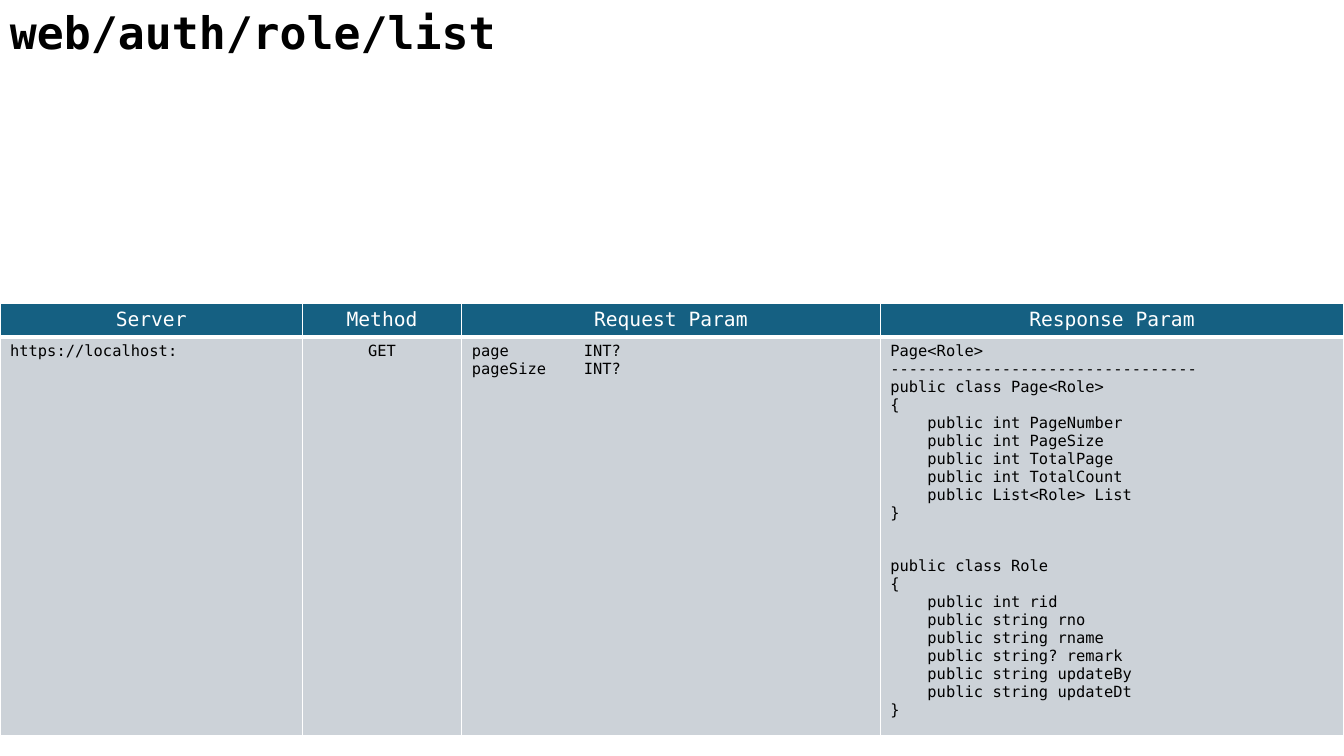
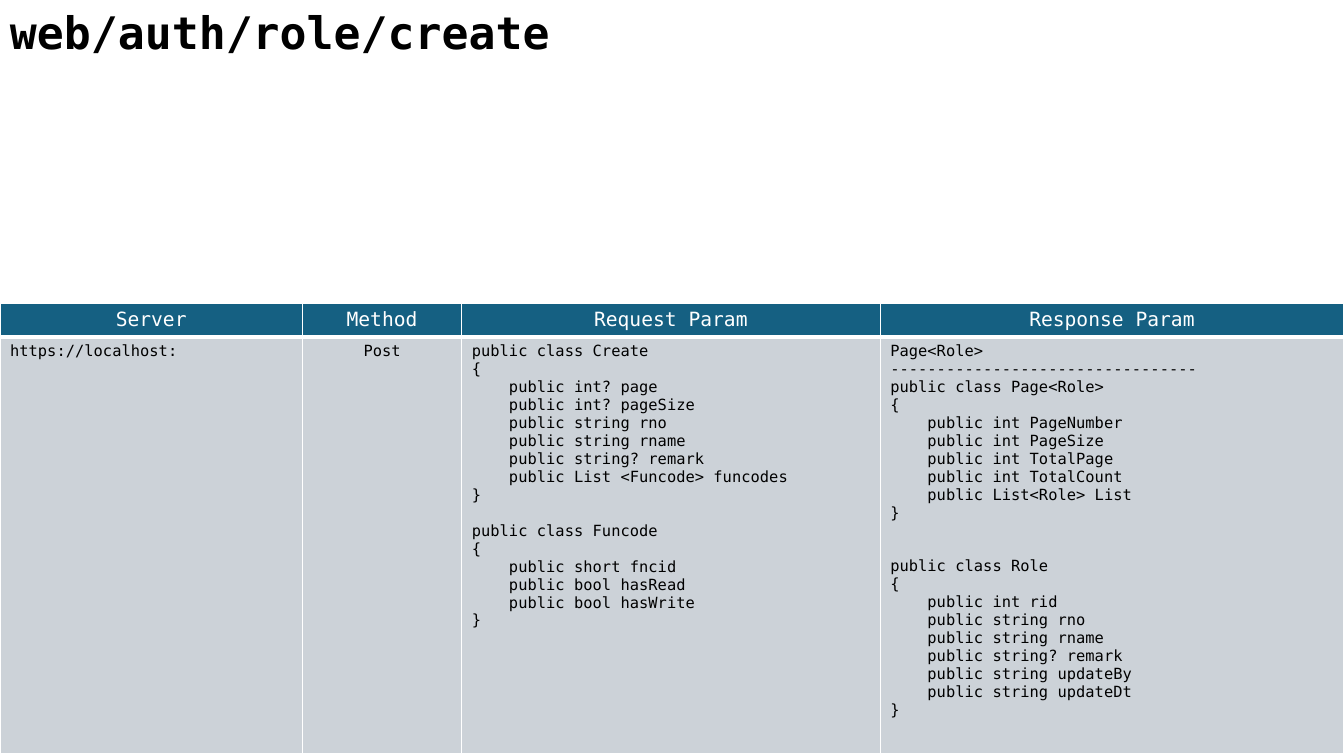
from lxml import etree
from pptx import Presentation
from pptx.dml.color import RGBColor
from pptx.enum.text import MSO_AUTO_SIZE, PP_ALIGN
from pptx.oxml.ns import qn
from pptx.util import Inches, Pt

CENTER = PP_ALIGN.CENTER
LEFT = PP_ALIGN.LEFT
FIT_SHAPE = MSO_AUTO_SIZE.SHAPE_TO_FIT_TEXT

COLORS = {"ink": "000000", "paper": "FFFFFF", "header": "156082", "body": "CCD2D8"}
FONT = "DejaVu Sans Mono"
FORMATS = {
    "title": {"name": FONT, "size": Pt(32), "bold": True},
    "header": {"name": FONT, "size": Pt(14), "bold": False},
    "body": {"name": FONT, "size": Pt(11), "bold": False},
}
INKS = {"title": "ink", "header": "paper", "body": "ink"}
BORDERS = {
    "header": {"lnL": 1, "lnR": 1, "lnT": 1, "lnB": 3},
    "body": {"lnL": 1, "lnR": 1, "lnT": 1, "lnB": 1},
}

TITLE_BOX = (0, 0, 9.45, 0.64)
TABLE_LEFT, TABLE_TOP = 0, 3.01
HEADER_HEIGHT = 0.33
COLUMNS = [("Server", 3, LEFT), ("Method", 1.58, CENTER),
           ("Request Param", 4.15, LEFT), ("Response Param", 4.6, LEFT)]
LINE_PITCH = 12.8
TAB_STOP = 1.11


def class_lines(name, fields):
    return [f"public class {name}", "{", *[f"    public {field}" for field in fields], "}"]


SERVER = [(0, ["https://localhost:"])]
ROLE_PAGE = [
    (0, ["Page<Role>", "-" * 33]
     + class_lines("Page<Role>", ["int PageNumber", "int PageSize", "int TotalPage",
                                  "int TotalCount", "List<Role> List"])),
    (2, class_lines("Role", ["int rid", "string rno", "string rname", "string? remark",
                             "string updateBy", "string updateDt"])),
]
LIST_REQUEST = [(0, ["page\tINT?", "pageSize\tINT?"])]
CREATE_REQUEST = [
    (0, class_lines("Create", ["int? page", "int? pageSize", "string rno", "string rname",
                               "string? remark", "List <Funcode> funcodes"])),
    (1, class_lines("Funcode", ["short fncid", "bool hasRead", "bool hasWrite"])),
]
ENDPOINTS = [
    ("web/auth/role/list", "GET", LIST_REQUEST, 3.95),
    ("web/auth/role/create", "Post", CREATE_REQUEST, 4.13),
]


def add_tab_stop(para):
    stops = etree.SubElement(para._p.get_or_add_pPr(), qn("a:tabLst"))
    etree.SubElement(stops, qn("a:tab"), pos=str(Inches(TAB_STOP)), algn="l")


def write_line(para, text, style, align=LEFT, gap=0):
    if "\t" in text:
        add_tab_stop(para)
    para.alignment = align
    if gap:
        para.space_before = Pt(gap * LINE_PITCH)
    span = para.add_run()
    span.text = text
    for name, value in FORMATS[style].items():
        setattr(span.font, name, value)
    span.font.color.rgb = RGBColor.from_string(COLORS[INKS[style]])


def write_blocks(frame, blocks, style, align):
    para = frame.paragraphs[0]
    for block_gap, lines in blocks:
        for index, text in enumerate(lines):
            if para is None:
                para = frame.add_paragraph()
            write_line(para, text, style, align, 0 if index else block_gap)
            para = None


def draw_borders(cell, widths):
    properties = cell._tc.get_or_add_tcPr()
    for index, (side, width) in enumerate(widths.items()):
        line = etree.Element(qn(f"a:{side}"), w=str(Pt(width)))
        fill = etree.SubElement(line, qn("a:solidFill"))
        etree.SubElement(fill, qn("a:srgbClr"), val=COLORS["paper"])
        properties.insert(index, line)


def fill_cell(cell, blocks, style, align):
    cell.fill.solid()
    cell.fill.fore_color.rgb = RGBColor.from_string(COLORS[style])
    draw_borders(cell, BORDERS[style])
    write_blocks(cell.text_frame, blocks, style, align)


def add_title(page, text, box):
    frame = page.shapes.add_textbox(*map(Inches, box)).text_frame
    frame.word_wrap = True
    frame.auto_size = FIT_SHAPE
    write_line(frame.paragraphs[0], text, "title")


def add_endpoint_table(page, contents, left, top, body_height):
    width = sum(column[1] for column in COLUMNS)
    box = (left, top, width, HEADER_HEIGHT + body_height)
    table = page.shapes.add_table(2, len(COLUMNS), *map(Inches, box)).table
    table.horz_banding = False
    for row, height in zip(table.rows, (HEADER_HEIGHT, body_height)):
        row.height = Inches(height)
    for index, (heading, column_width, align) in enumerate(COLUMNS):
        table.columns[index].width = Inches(column_width)
        fill_cell(table.cell(0, index), [(0, [heading])], "header", CENTER)
        fill_cell(table.cell(1, index), contents[index], "body", align)


def add_endpoint_page(deck, title, method, request, body_height):
    page = deck.slides.add_slide(deck.slide_layouts[6])
    add_title(page, title, TITLE_BOX)
    contents = [SERVER, [(0, [method])], request, ROLE_PAGE]
    add_endpoint_table(page, contents, TABLE_LEFT, TABLE_TOP, body_height)


def main():
    deck = Presentation()
    deck.slide_width, deck.slide_height = Inches(13.33), Inches(7.5)
    for endpoint in ENDPOINTS:
        add_endpoint_page(deck, *endpoint)
    deck.save("out.pptx")


if __name__ == "__main__":
    main()
